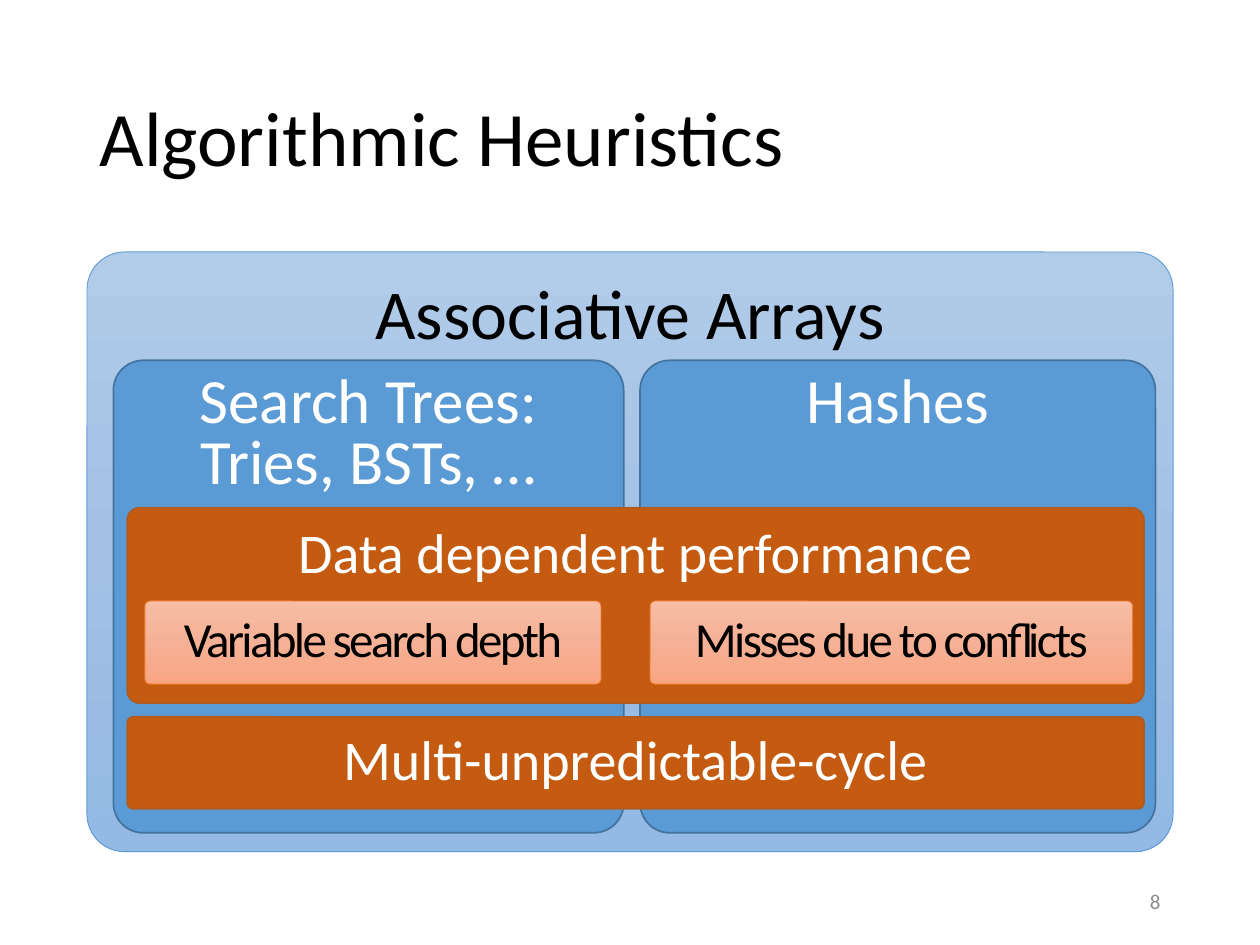
from copy import deepcopy
from pptx import Presentation
from pptx.dml.color import RGBColor
from pptx.enum.shapes import MSO_SHAPE
from pptx.enum.text import MSO_ANCHOR, MSO_AUTO_SIZE, PP_ALIGN
from pptx.oxml.ns import qn
from pptx.util import Inches, Pt

TITLE = "Algorithmic Heuristics"
PAGE_NUMBER = "8"
STYLES = {
    "group": dict(fill=["B1CBE9", "A3C1E5", "93B9E4"], line="5B9BD5", width=0.5,
                  text=dict(size=40)),
    "structure": dict(fill=["5B9BD5"], line="43739E", width=1,
                      text=dict(size=36, color="FFFFFF", spacing=0.8)),
    "property": dict(fill=["C55A11"], line="AF5C24", width=1,
                     text=dict(size=32, color="FFFFFF")),
    "cause": dict(fill=["F7BDA5", "F5B196", "F8A582"], line="ED7D31", width=0.5,
                  text=dict(size=28, tracking=-1.5)),
}
PANELS = [
    ("group", ["Associative Arrays"], (0.69, 2, 8.62, 4.76)),
    ("structure", ["Hashes"], (5.08, 2.86, 4.09, 3.75)),
    ("structure", ["Search Trees:", "Tries, BSTs, …"], (0.9, 2.86, 4.05, 3.75)),
    ("property", ["Multi-unpredictable-cycle"], (1.01, 5.69, 8.07, 0.73)),
    ("property", ["Data dependent performance"], (1.01, 4.03, 8.07, 1.55)),
    ("cause", ["Variable search depth"], (1.15, 4.77, 3.62, 0.66)),
    ("cause", ["Misses due to conflicts"], (5.16, 4.77, 3.83, 0.66)),
]


def rgb(color):
    return RGBColor.from_string(color)


def write(frame, lines, size=12, color="000000", align=PP_ALIGN.CENTER,
          anchor=MSO_ANCHOR.TOP, spacing=None, tracking=None):
    frame.word_wrap = True
    frame.auto_size = MSO_AUTO_SIZE.NONE
    frame.vertical_anchor = anchor
    for index, line in enumerate(lines):
        para = frame.add_paragraph() if index else frame.paragraphs[0]
        para.alignment = align
        if spacing:
            para.line_spacing = spacing
        span = para.add_run()
        span.text = line
        span.font.name = "Calibri"
        span.font.size = Pt(size)
        span.font.color.rgb = rgb(color)
        if tracking:
            span.font._element.set("spc", str(int(tracking * 100)))


def paint(shape, colors):
    fill = shape.fill
    if len(colors) == 1:
        fill.solid()
        fill.fore_color.rgb = rgb(colors[0])
        return
    fill.gradient()
    fill.gradient_angle = 270
    stop_list = shape._element.spPr.find(qn("a:gradFill")).find(qn("a:gsLst"))
    stop_list.insert(1, deepcopy(stop_list[0]))
    for index, (stop, color) in enumerate(zip(fill.gradient_stops, colors)):
        stop.position = index / (len(colors) - 1)
        stop.color.rgb = rgb(color)


def add_panel(page, kind, lines, place):
    style = STYLES[kind]
    panel = page.shapes.add_shape(MSO_SHAPE.ROUNDED_RECTANGLE, *map(Inches, place))
    panel.adjustments[0] = 0.063
    panel.shadow.inherit = False
    paint(panel, style["fill"])
    panel.line.color.rgb = rgb(style["line"])
    panel.line.width = Pt(style["width"])
    write(panel.text_frame, lines, **style["text"])


def main():
    """Build the slide on algorithmic heuristics."""
    deck = Presentation()
    deck.slide_width, deck.slide_height = Inches(10), Inches(7.5)
    page = deck.slides.add_slide(deck.slide_layouts[5])
    title = page.shapes.title
    title.left, title.top, title.width, title.height = map(Inches, (0.69, 0.4, 8.62, 1.45))
    write(title.text_frame, [TITLE], size=44, align=PP_ALIGN.LEFT,
          anchor=MSO_ANCHOR.MIDDLE, spacing=0.9)
    for kind, lines, place in PANELS:
        add_panel(page, kind, lines, place)
    number = page.shapes.add_textbox(*map(Inches, (7.06, 6.95, 2.25, 0.4)))
    write(number.text_frame, [PAGE_NUMBER], color="8C8C8C", align=PP_ALIGN.RIGHT,
          anchor=MSO_ANCHOR.MIDDLE)
    deck.save("out.pptx")


if __name__ == "__main__":
    main()
